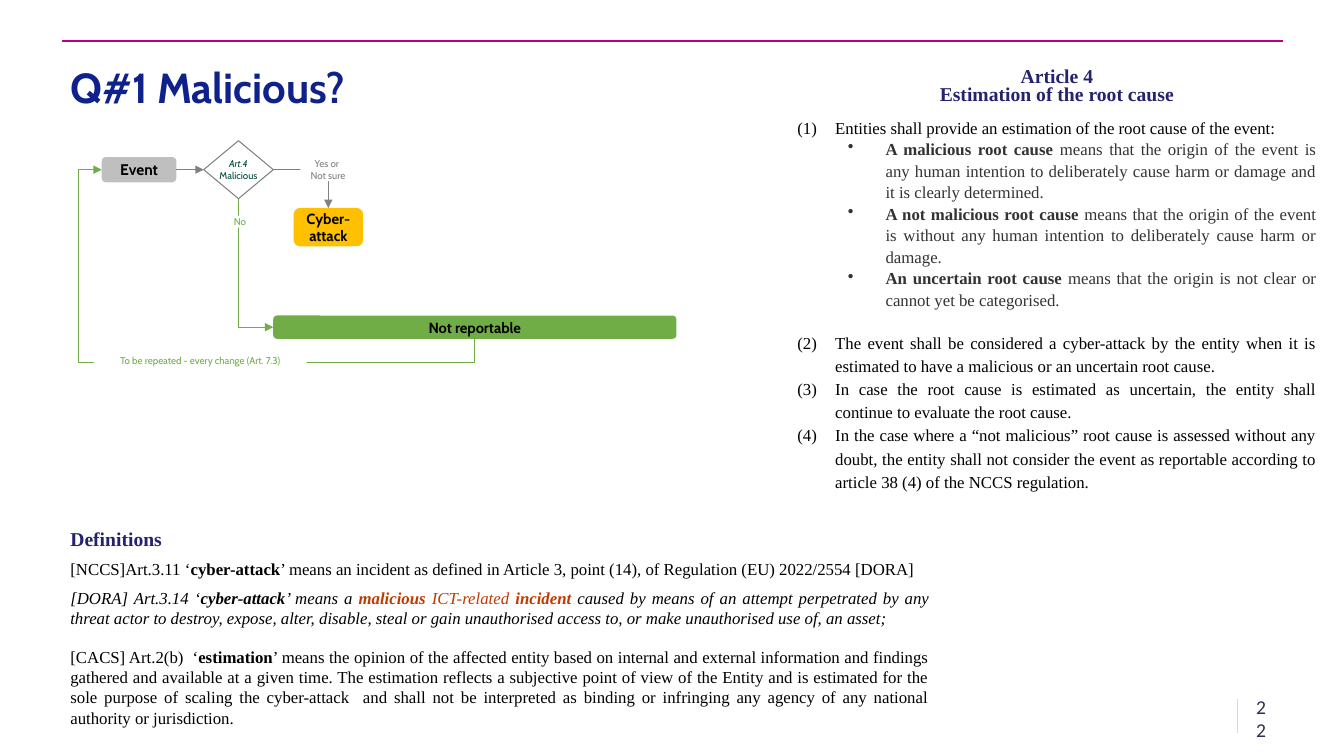
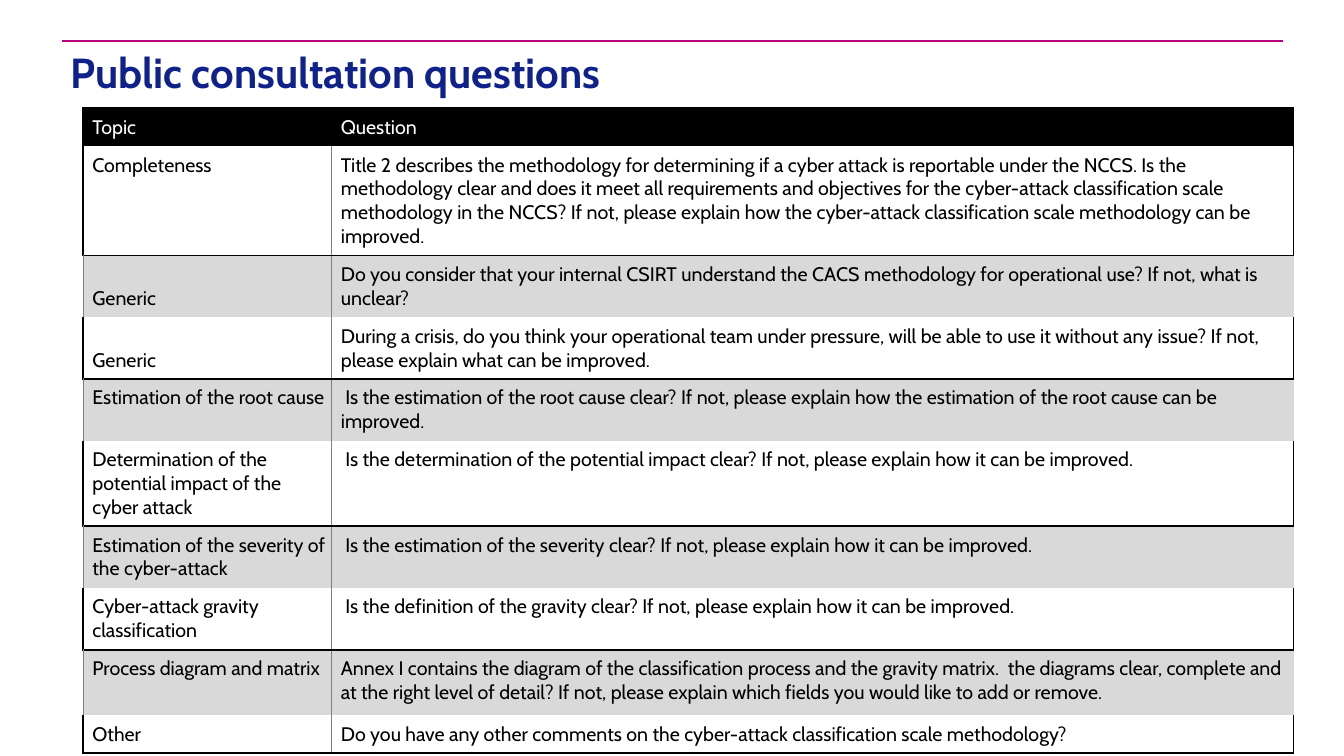
from pptx import Presentation
from pptx.dml.color import RGBColor
from pptx.enum import shapes, text
from pptx.oxml import xmlchemy, ns
from pptx.util import Pt
from lxml import etree

NAVY = RGBColor(0x0F, 0x21, 0x8B)
INDIGO = RGBColor(0x23, 0x23, 0x6E)
SLATE = RGBColor(0x2C, 0x30, 0x51)
MAGENTA = RGBColor(0xB9, 0x03, 0x7E)
SKY = RGBColor(0xC1, 0xE0, 0xF7)
BLACK = RGBColor(0, 0, 0)
WHITE = RGBColor(0xFF, 0xFF, 0xFF)
CHARCOAL = RGBColor(0x33, 0x33, 0x33)
GRAY = RGBColor(0x80, 0x80, 0x80)
SILVER = RGBColor(0xBF, 0xBF, 0xBF)
BAND = RGBColor(0xD9, 0xD9, 0xD9)
GREEN = RGBColor(0x70, 0xAD, 0x47)
AMBER = RGBColor(0xFF, 0xC0, 0x00)
TEAL = RGBColor(0x00, 0x4A, 0x40)
RUST = RGBColor(0xBF, 0x3A, 0x00)
HEADING_FONT = "Cabin"
BODY_FONT = "Times New Roman"
LEFT, CENTER, RIGHT, JUSTIFY = (
    text.PP_ALIGN.LEFT, text.PP_ALIGN.CENTER, text.PP_ALIGN.RIGHT, text.PP_ALIGN.JUSTIFY)
TOP, MIDDLE, BOTTOM = text.MSO_ANCHOR.TOP, text.MSO_ANCHOR.MIDDLE, text.MSO_ANCHOR.BOTTOM
SHAPE = shapes.MSO_SHAPE
CONNECTOR = shapes.MSO_CONNECTOR


def write(frame, content, size=12, font=BODY_FONT, color=BLACK, bold=False, italic=False,
          align=LEFT, line=None, after=0, before=0, level=0, indent=0, bullet=None):
    paragraph = frame.paragraphs[0]
    if paragraph.runs:
        paragraph = frame.add_paragraph()
    paragraph.alignment = align
    paragraph.level = level
    paragraph.line_spacing = line
    paragraph.space_before = Pt(before)
    paragraph.space_after = Pt(after)
    if bullet:
        properties = paragraph._p.get_or_add_pPr()
        properties.set("marL", str(Pt(indent)))
        properties.set("indent", str(-Pt(27)))
        tag, attribute, value = bullet
        etree.SubElement(properties, ns.qn(tag)).set(attribute, value)
    pieces = [(content, {})] if isinstance(content, str) else content
    for words, changes in pieces:
        for position, part in enumerate(words.split("\n")):
            if position:
                paragraph.add_line_break()
            run = paragraph.add_run()
            run.text = part
            run.font.name = font
            run.font.size = Pt(size)
            run.font.bold = changes.get("bold", bold)
            run.font.italic = changes.get("italic", italic)
            run.font.color.rgb = changes.get("color", color)


def draw_line(slide, color, width, points=(0, 0, 0, 0), kind=CONNECTOR.STRAIGHT, arrow=False):
    connector = slide.shapes.add_connector(kind, *[Pt(value) for value in points])
    connector.line.color.rgb = color
    connector.line.width = Pt(width)
    properties = connector._element.spPr
    if arrow:
        etree.SubElement(properties.get_or_add_ln(), ns.qn("a:tailEnd")).set("type", "triangle")
    etree.SubElement(properties, ns.qn("a:effectLst"))
    return connector


presentation = Presentation()
presentation.slide_width = Pt(960)
presentation.slide_height = Pt(540)

slides = []
for title, top in [("Q#1 Malicious?", 44.5), ("Public consultation questions", 34)]:
    slide = presentation.slides.add_slide(presentation.slide_layouts[5])
    draw_line(slide, MAGENTA, 1.5, (44, 29, 916.5, 29))
    heading = slide.shapes.title
    heading.left, heading.top, heading.width, heading.height = Pt(43.2), Pt(top), Pt(873), Pt(64)
    heading.text_frame.vertical_anchor = TOP
    write(heading.text_frame, title, size=30, font=HEADING_FONT, color=NAVY, bold=True, line=0.9)
    slides.append(slide)
flow_slide, question_slide = slides

draw_line(flow_slide, SKY, 1, (884, 499, 884, 523.5))
frames = {}
for name, left, top, width, height in [
    ("number", 884, 500.5, 27.5, 25),
    ("article", 562.5, 46, 385, 311),
    ("definitions", 43.2, 373, 628, 80),
    ("estimation", 43.2, 458.5, 628, 66),
]:
    box = flow_slide.shapes.add_textbox(Pt(left), Pt(top), Pt(width), Pt(height))
    box.text_frame.word_wrap = True
    frames[name] = box.text_frame

frames["number"].vertical_anchor = MIDDLE
write(frames["number"], "22", size=14, font="Calibri", color=SLATE, align=RIGHT)

write(frames["article"], "Article 4\nEstimation of the root cause", size=14, color=INDIGO,
      bold=True, align=CENTER, line=Pt(13), after=6)
NUMBERED = dict(align=JUSTIFY, line=1.15, indent=27,
                bullet=("a:buAutoNum", "type", "arabicParenBoth"))
write(frames["article"], "Entities shall provide an estimation of the root cause of the event:",
      **NUMBERED)
for cause, meaning in [
    ("A malicious root cause ", "means that the origin of the event is any human intention to "
     "deliberately cause harm or damage and it is clearly determined."),
    ("A not malicious root cause ", "means that the origin of the event is without any human "
     "intention to deliberately cause harm or damage."),
    ("An uncertain root cause ", "means that the origin is not clear or cannot yet be "
     "categorised."),
]:
    write(frames["article"], [(cause, {"bold": True}), (meaning, {})], color=CHARCOAL,
          align=JUSTIFY, line=1.07, level=1, indent=63, bullet=("a:buChar", "char", "•"))
for gap, rule in [
    (14, "The event shall be considered a cyber-attack by the entity when it is estimated to "
     "have a malicious or an uncertain root cause."),
    (0, "In case the root cause is estimated as uncertain, the entity shall continue to "
     "evaluate the root cause."),
    (0, "In the case where a “not malicious” root cause is assessed without any doubt, the "
     "entity shall not consider the event as reportable according to article 38 (4) of the "
     "NCCS regulation."),
]:
    write(frames["article"], rule, before=gap, **NUMBERED)

DEFINITION = dict(align=JUSTIFY, after=6)
write(frames["definitions"], "Definitions", size=14, color=INDIGO, bold=True, **DEFINITION)
write(frames["definitions"], [
    ("[NCCS]Art.3.11 ‘", {}),
    ("cyber-attack", {"bold": True}),
    ("’ means an incident as defined in Article 3, point (14), of Regulation (EU) 2022/2554 "
     "[DORA]", {}),
], **DEFINITION)
write(frames["definitions"], [
    ("[DORA] Art.3.14 ‘", {}),
    ("cyber-attack", {"bold": True}),
    ("’ means a ", {}),
    ("malicious ", {"bold": True, "color": RUST}),
    ("ICT-related ", {"color": RUST}),
    ("incident ", {"bold": True, "color": RUST}),
    ("caused by means of an attempt perpetrated by any threat actor to destroy, expose, alter, "
     "disable, steal or gain unauthorised access to, or make unauthorised use of, an asset;", {}),
], italic=True, **DEFINITION)
write(frames["estimation"], [
    ("[CACS] Art.2(b)  ‘", {}),
    ("estimation", {"bold": True}),
    ("’ means the opinion of the affected entity based on internal and external information and "
     "findings gathered and available at a given time. The estimation reflects a subjective "
     "point of view of the Entity and is estimated for the sole purpose of scaling the "
     "cyber-attack  and shall not be interpreted as binding or infringing any agency of any "
     "national authority or jurisdiction.", {}),
], **DEFINITION)

nodes = {}
for name, kind, left, top, width, height, fill, content, size in [
    ("event", SHAPE.ROUNDED_RECTANGLE, 72.7, 112.2, 53.3, 18, SILVER, "Event", 11),
    ("malicious", SHAPE.DIAMOND, 145.5, 100.5, 49.7, 41.4, None,
     [("Art.4\n", {"italic": True}), ("Malicious", {})], 7),
    ("attack", SHAPE.ROUNDED_RECTANGLE, 209.7, 148.5, 49.7, 27.4, AMBER, "Cyber-\nattack", 10.5),
    ("not reportable", SHAPE.ROUNDED_RECTANGLE, 195.2, 225.4, 288, 16.6, GREEN,
     "Not reportable", 10.5),
]:
    node = flow_slide.shapes.add_shape(kind, Pt(left), Pt(top), Pt(width), Pt(height))
    node.shadow.inherit = False
    frame = node.text_frame
    frame.vertical_anchor = MIDDLE
    if fill:
        node.fill.solid()
        node.fill.fore_color.rgb = fill
        node.line.fill.background()
    else:
        node.fill.background()
        node.line.color.rgb = GRAY
        node.line.width = Pt(0.75)
        frame.margin_left = frame.margin_right = frame.margin_top = frame.margin_bottom = 0
        frame.word_wrap = False
    write(frame, content, size=size, font=HEADING_FONT, color=BLACK if fill else TEAL,
          bold=bool(fill), align=CENTER)
    nodes[name] = node

TOP_SITE, LEFT_SITE, BOTTOM_SITE, RIGHT_SITE = range(4)
for start, start_site, end, end_site, color, preset, rotation, adjustments in [
    ("event", RIGHT_SITE, "malicious", LEFT_SITE, GRAY, "straightConnector1", 0, []),
    ("malicious", RIGHT_SITE, "attack", TOP_SITE, GRAY, "bentConnector2", 0, []),
    ("malicious", BOTTOM_SITE, "not reportable", LEFT_SITE, GREEN, "bentConnector2", 270, []),
    ("not reportable", BOTTOM_SITE, "event", LEFT_SITE, GREEN, "bentConnector4", 90,
     [-14100, 106400]),
]:
    kind = CONNECTOR.ELBOW if preset.startswith("bent") else CONNECTOR.STRAIGHT
    connector = draw_line(flow_slide, color, 0.5, kind=kind, arrow=True)
    connector.begin_connect(nodes[start], start_site)
    connector.end_connect(nodes[end], end_site)
    properties = connector._element.spPr
    geometry = properties.find(ns.qn("a:prstGeom"))
    geometry.set("prst", preset)
    guides = geometry.find(ns.qn("a:avLst"))
    for number, value in enumerate(adjustments, 1):
        guide = etree.SubElement(guides, ns.qn("a:gd"))
        guide.set("name", f"adj{number}")
        guide.set("fmla", f"val {value}")
    if rotation:
        width, height = connector.width, connector.height
        connector.left += (width - height) // 2
        connector.top += (height - width) // 2
        connector.width, connector.height = height, width
        frame_xml = properties.find(ns.qn("a:xfrm"))
        frame_xml.set("rot", str(rotation * 60000))
        frame_xml.set("flipH", "1")
        frame_xml.set("flipV", "0")

for content, left, top, width, height, color in [
    ("Yes or \nNot sure", 214.5, 112.5, 39.6, 17, GRAY),
    ("To be repeated - every change (Art. 7.3)", 67, 253.5, 152, 8.6, GREEN),
    ("No", 151.5, 154, 39.6, 8.6, GREEN),
]:
    label = flow_slide.shapes.add_textbox(Pt(left), Pt(top), Pt(width), Pt(height))
    label.fill.solid()
    label.fill.fore_color.rgb = WHITE
    frame = label.text_frame
    frame.word_wrap = True
    frame.margin_left = frame.margin_right = frame.margin_top = frame.margin_bottom = 0
    write(frame, content, size=7, font=HEADING_FONT, color=color, align=CENTER)

questions = [
    (26, "Topic", "Question"),
    (78, "Completeness", "Title 2 describes the methodology for determining if a cyber attack is "
     "reportable under the NCCS. Is the methodology clear and does it meet all requirements and "
     "objectives for the cyber-attack classification scale methodology in the NCCS? If not, "
     "please explain how the cyber-attack classification scale methodology can be improved."),
    (44, "Generic", "Do you consider that your internal CSIRT understand the CACS methodology for "
     "operational use? If not, what is unclear?"),
    (44, "Generic", "During a crisis, do you think your operational team under pressure, will be "
     "able to use it without any issue? If not, please explain what can be improved."),
    (44, "Estimation of the root cause", " Is the estimation of the root cause clear? If not, "
     "please explain how the estimation of the root cause can be improved."),
    (61, "Determination of the potential impact of the cyber attack", " Is the determination of "
     "the potential impact clear? If not, please explain how it can be improved."),
    (44, "Estimation of the severity of the cyber-attack", " Is the estimation of the severity "
     "clear? If not, please explain how it can be improved."),
    (44, "Cyber-attack gravity classification", " Is the definition of the gravity clear? If "
     "not, please explain how it can be improved."),
    (47, "Process diagram and matrix", "Annex I contains the diagram of the classification "
     "process and the gravity matrix.  the diagrams clear, complete and at the right level of "
     "detail? If not, please explain which fields you would like to add or remove."),
    (26, "Other", "Do you have any other comments on the cyber-attack classification scale "
     "methodology?"),
]
table = question_slide.shapes.add_table(
    len(questions), 2, Pt(59.5), Pt(77.3), Pt(864.5), Pt(458)).table
table.horz_banding = False
table.columns[0].width, table.columns[1].width = Pt(177.5), Pt(687)
THICK, THIN = (BLACK, 1.5), (GRAY, 0.5)
for row, (height, *entries) in enumerate(questions):
    table.rows[row].height = Pt(height)
    header = row == 0
    banded = row % 2 == 0 and not header
    plain = row % 2 == 1
    inner = THICK if header else THIN
    for column, entry in enumerate(entries):
        cell = table.cell(row, column)
        borders = {
            "L": inner if column else THIN if banded else THICK,
            "R": inner if column == 0 else THICK if plain else None,
            "T": None if plain else THICK,
            "B": THICK if plain else None,
        }
        properties = cell._tc.get_or_add_tcPr()
        for side, border in borders.items():
            edge = etree.SubElement(properties, ns.qn(f"a:ln{side}"))
            if border:
                edge.set("w", str(Pt(border[1])))
                fill = etree.SubElement(edge, ns.qn("a:solidFill"))
                etree.SubElement(fill, ns.qn("a:srgbClr")).set("val", str(border[0]))
            else:
                etree.SubElement(edge, ns.qn("a:noFill"))
        cell.fill.solid()
        cell.fill.fore_color.rgb = BLACK if header else BAND if banded else WHITE
        cell.margin_left, cell.margin_right = Pt(6.5), 0
        cell.margin_top = cell.margin_bottom = Pt(5)
        cell.vertical_anchor = MIDDLE if header else BOTTOM if entries[0] == "Generic" else TOP
        write(cell.text_frame, entry, size=14, font=HEADING_FONT,
              color=WHITE if header else BLACK)

presentation.save("out.pptx")
